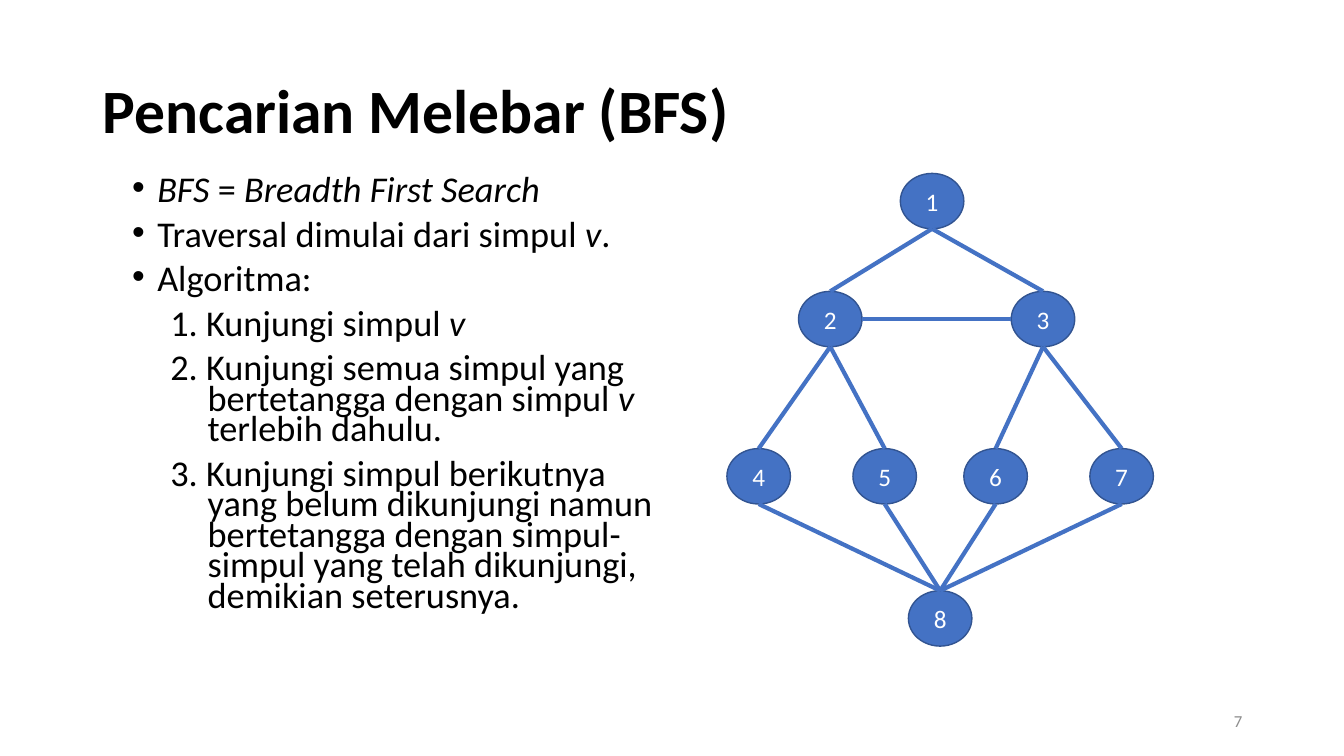
import lxml.etree
import pptx
import pptx.dml.color
import pptx.enum.shapes
import pptx.enum.text
import pptx.oxml.ns
import pptx.util
from pptx.util import Inches

ALIGN = pptx.enum.text.PP_ALIGN
MIDDLE = pptx.enum.text.MSO_ANCHOR.MIDDLE
BLUE, OUTLINE, BLACK, WHITE, GREY = "4472C4", "325491", "000000", "FFFFFF", "8C8C8C"
NODE_WIDTH, NODE_HEIGHT = 0.63, 0.55

# Left and top of each graph node
NODES = {
    1: (8.93, 1.72),
    2: (7.92, 2.89), 3: (10.03, 2.89),
    4: (7.21, 4.45), 5: (8.46, 4.45), 6: (9.56, 4.45), 7: (10.81, 4.45),
    8: (9.01, 5.86),
}
EDGES = [(2, 4), (2, 5), (3, 6), (3, 7), (1, 2), (1, 3),
         (6, 8), (7, 8), (4, 8), (5, 8), (2, 3)]

# Each paragraph is a list of (text, italic) spans
BULLETS = [
    [("BFS", True), (" = ", False), ("Breadth First Search", True)],
    [("Traversal dimulai dari simpul ", False), ("v", True), (".", False)],
    [("Algoritma:", False)],
]
STEPS = [
    [("1. Kunjungi simpul ", False), ("v", True)],
    [("2. Kunjungi semua simpul yang bertetangga dengan simpul ", False),
     ("v", True), (" terlebih dahulu.", False)],
    [("3. Kunjungi simpul berikutnya yang belum dikunjungi namun bertetangga "
      "dengan simpul-simpul yang telah dikunjungi, demikian seterusnya.", False)],
]


def rgb(value):
    return pptx.dml.color.RGBColor.from_string(value)


def set_values(target, values):
    for name, value in values.items():
        setattr(target, name, value)


def place(box, left, top, width, height):
    set_values(box, {"left": Inches(left), "top": Inches(top),
                     "width": Inches(width), "height": Inches(height)})


def add_span(para, text, size, color, **values):
    span = para.add_run()
    span.text = text
    set_values(span.font, {"name": "Calibri", "size": pptx.util.Pt(size), **values})
    span.font.color.rgb = rgb(color)


def set_bullet(para, margin, indent, symbol=None):
    """Set the hanging indent and the bullet; without a symbol there is none."""
    properties = para._p.get_or_add_pPr()
    properties.set("marL", str(Inches(margin)))
    properties.set("indent", str(Inches(indent)))
    tag = pptx.oxml.ns.qn("a:buChar" if symbol else "a:buNone")
    bullet = lxml.etree.SubElement(properties, tag)
    if symbol:
        bullet.set("char", symbol)


def fill_title(title):
    place(title, 0.92, 0.4, 11.5, 1.45)
    set_values(title.text_frame, {"vertical_anchor": MIDDLE, "word_wrap": True})
    para = title.text_frame.paragraphs[0]
    set_values(para, {"alignment": ALIGN.LEFT, "line_spacing": 0.9})
    add_span(para, "Pencarian Melebar (BFS)", 44, BLACK, bold=True)


def fill_body(body):
    place(body, 1.21, 1.72, 5.46, 4.95)
    frame = body.text_frame
    set_values(frame, {"word_wrap": True,
                       "auto_size": pptx.enum.text.MSO_AUTO_SIZE.NONE})
    for index, spans in enumerate(BULLETS + STEPS):
        para = frame.add_paragraph() if index else frame.paragraphs[0]
        if index < len(BULLETS):
            set_bullet(para, 0.25, -0.25, "•")
        else:
            set_bullet(para, 0.75, -0.37)
        set_values(para, {"line_spacing": 0.7,
                          "space_before": pptx.util.Pt(10 if index else 0)})
        for text, italic in spans:
            add_span(para, text, 25.9, BLACK, italic=italic)


def add_node(page, number):
    left, top = NODES[number]
    node = page.shapes.add_shape(
        pptx.enum.shapes.MSO_SHAPE.OVAL, Inches(left), Inches(top),
        Inches(NODE_WIDTH), Inches(NODE_HEIGHT))
    node.shadow.inherit = False
    node.fill.solid()
    node.fill.fore_color.rgb = rgb(BLUE)
    node.line.color.rgb = rgb(OUTLINE)
    node.line.width = pptx.util.Pt(1)
    node.text_frame.vertical_anchor = MIDDLE
    para = node.text_frame.paragraphs[0]
    para.alignment = ALIGN.CENTER
    add_span(para, str(number), 18, WHITE)


def add_edge(page, upper, lower):
    """Join bottom to top, or side to side for nodes on one level."""
    (x1, y1), (x2, y2) = NODES[upper], NODES[lower]
    if y1 == y2:
        x1, y1, y2 = x1 + NODE_WIDTH, y1 + NODE_HEIGHT / 2, y2 + NODE_HEIGHT / 2
    else:
        x1, y1, x2 = x1 + NODE_WIDTH / 2, y1 + NODE_HEIGHT, x2 + NODE_WIDTH / 2
    edge = page.shapes.add_connector(
        pptx.enum.shapes.MSO_CONNECTOR.STRAIGHT,
        Inches(x1), Inches(y1), Inches(x2), Inches(y2))
    edge.line.color.rgb = rgb(BLUE)
    edge.line.width = pptx.util.Pt(3)
    lxml.etree.SubElement(edge._element.spPr, pptx.oxml.ns.qn("a:effectLst"))


def add_page_number(page, number):
    box = page.shapes.add_textbox(Inches(9.42), Inches(6.95), Inches(3), Inches(0.4))
    set_values(box.text_frame, {"vertical_anchor": MIDDLE, "word_wrap": True})
    para = box.text_frame.paragraphs[0]
    para.alignment = ALIGN.RIGHT
    add_span(para, str(number), 12, GREY)


def main():
    deck = pptx.Presentation()
    set_values(deck, {"slide_width": Inches(13.33), "slide_height": Inches(7.5)})
    page = deck.slides.add_slide(deck.slide_layouts[1])
    fill_title(page.shapes.title)
    fill_body(page.placeholders[1])
    for number in NODES:
        add_node(page, number)
    for upper, lower in EDGES:
        add_edge(page, upper, lower)
    add_page_number(page, 7)
    deck.save("out.pptx")


if __name__ == "__main__":
    main()
